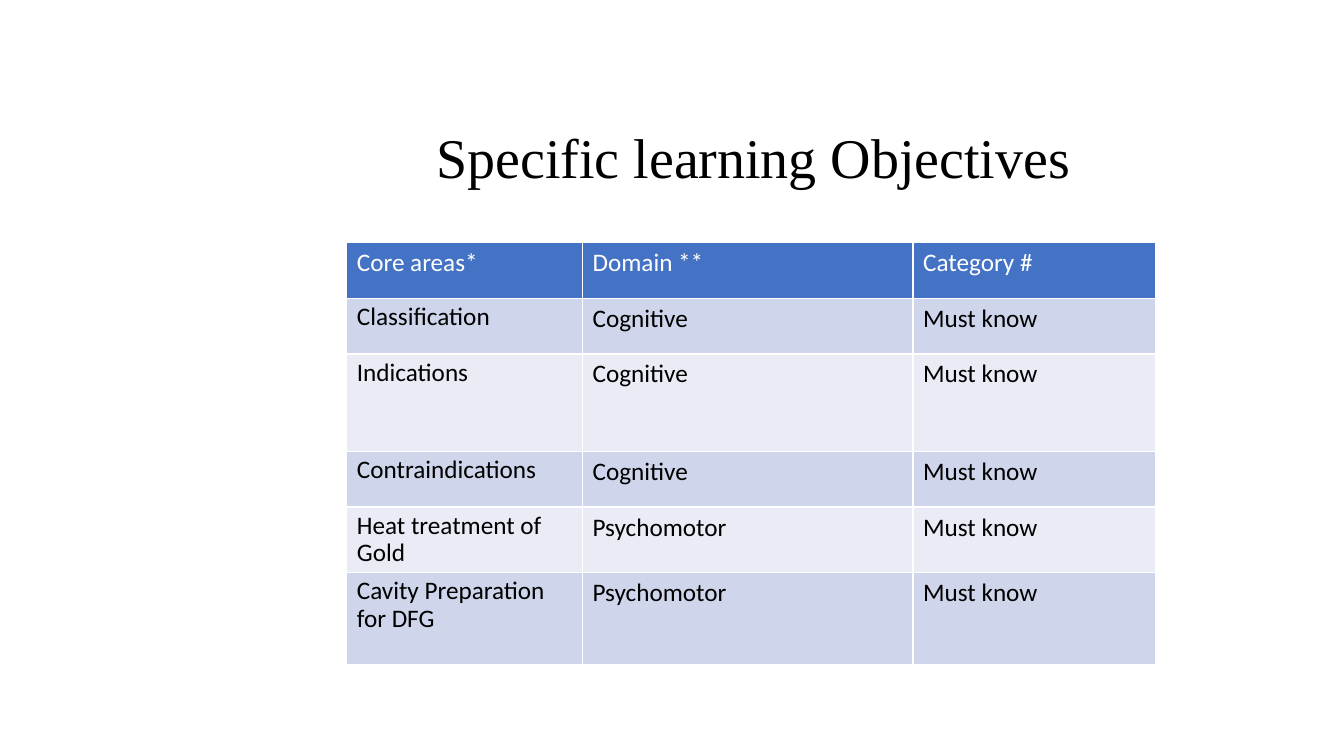
import pptx
import pptx.dml.color
import pptx.enum.text
import pptx.util

Cm = pptx.util.Cm
Pt = pptx.util.Pt

COLUMN_WIDTHS = [5.94, 8.33, 6.12]
ROW_HEIGHTS = [1.4, 1.4, 2.46, 1.4, 1.63, 2.31]
HEADER_FILL = "4472C4"
BAND_FILLS = ["E9EBF5", "CFD5EA"]
OBJECTIVES = [
    ["Core areas*", "Domain **", "Category #"],
    ["Classification", "Cognitive", "Must know"],
    ["Indications", "Cognitive", "Must know"],
    ["Contraindications", "Cognitive", "Must know"],
    ["Heat treatment of Gold", "Psychomotor", "Must know"],
    ["Cavity Preparation for DFG", "Psychomotor", "Must know"],
]
TITLE_FONT = {"name": "Times New Roman", "size": Pt(40), "bold": False}
CELL_FONT = {"name": "Calibri", "size": Pt(18), "bold": False}


def rgb(value):
    return pptx.dml.color.RGBColor.from_string(value)


def write_text(frame, text, font_format, color, para_format):
    para = frame.paragraphs[0]
    for name, value in para_format.items():
        setattr(para, name, value)
    span = para.add_run()
    span.text = text
    for name, value in font_format.items():
        setattr(span.font, name, value)
    span.font.color.rgb = rgb(color)


def add_title(page, left, top, width, height):
    title = page.shapes.title
    geometry = {"left": left, "top": top, "width": width, "height": height}
    for name, value in geometry.items():
        setattr(title, name, Cm(value))
    frame = title.text_frame
    frame.word_wrap = True
    frame.vertical_anchor = pptx.enum.text.MSO_ANCHOR.BOTTOM
    para_format = {"alignment": pptx.enum.text.PP_ALIGN.CENTER, "line_spacing": 0.9}
    # The closing space is part of the centred line
    write_text(frame, "Specific learning Objectives ", TITLE_FONT, "000000", para_format)


def add_objectives_table(page, left, top):
    # White rules come from the default table style
    table = page.shapes.add_table(
        len(ROW_HEIGHTS), len(COLUMN_WIDTHS), Cm(left), Cm(top),
        Cm(sum(COLUMN_WIDTHS)), Cm(sum(ROW_HEIGHTS))).table
    for column, width in zip(table.columns, COLUMN_WIDTHS):
        column.width = Cm(width)
    for row, height in zip(table.rows, ROW_HEIGHTS):
        row.height = Cm(height)

    # Header, then alternating bands
    for row_index, texts in enumerate(OBJECTIVES):
        is_header = row_index == 0
        fill = HEADER_FILL if is_header else BAND_FILLS[row_index % 2]
        color = "FFFFFF" if is_header else "000000"
        for column_index, text in enumerate(texts):
            cell = table.cell(row_index, column_index)
            cell.fill.solid()
            cell.fill.fore_color.rgb = rgb(fill)
            is_core_area = column_index == 0 and not is_header
            para_format = {"line_spacing": 0.9} if is_core_area else {}
            write_text(cell.text_frame, text, CELL_FONT, color, para_format)


def add_objectives_page(deck):
    page = deck.slides.add_slide(deck.slide_layouts[0])
    # The subtitle is not used
    subtitle = page.placeholders[1].element
    subtitle.getparent().remove(subtitle)
    add_title(page, 10.59, 1.12, 17.15, 3.81)
    add_objectives_table(page, 8.74, 6.12)


def main():
    deck = pptx.Presentation()
    deck.slide_width = Cm(33.87)
    deck.slide_height = Cm(19.05)
    add_objectives_page(deck)
    deck.save("out.pptx")


if __name__ == "__main__":
    main()
